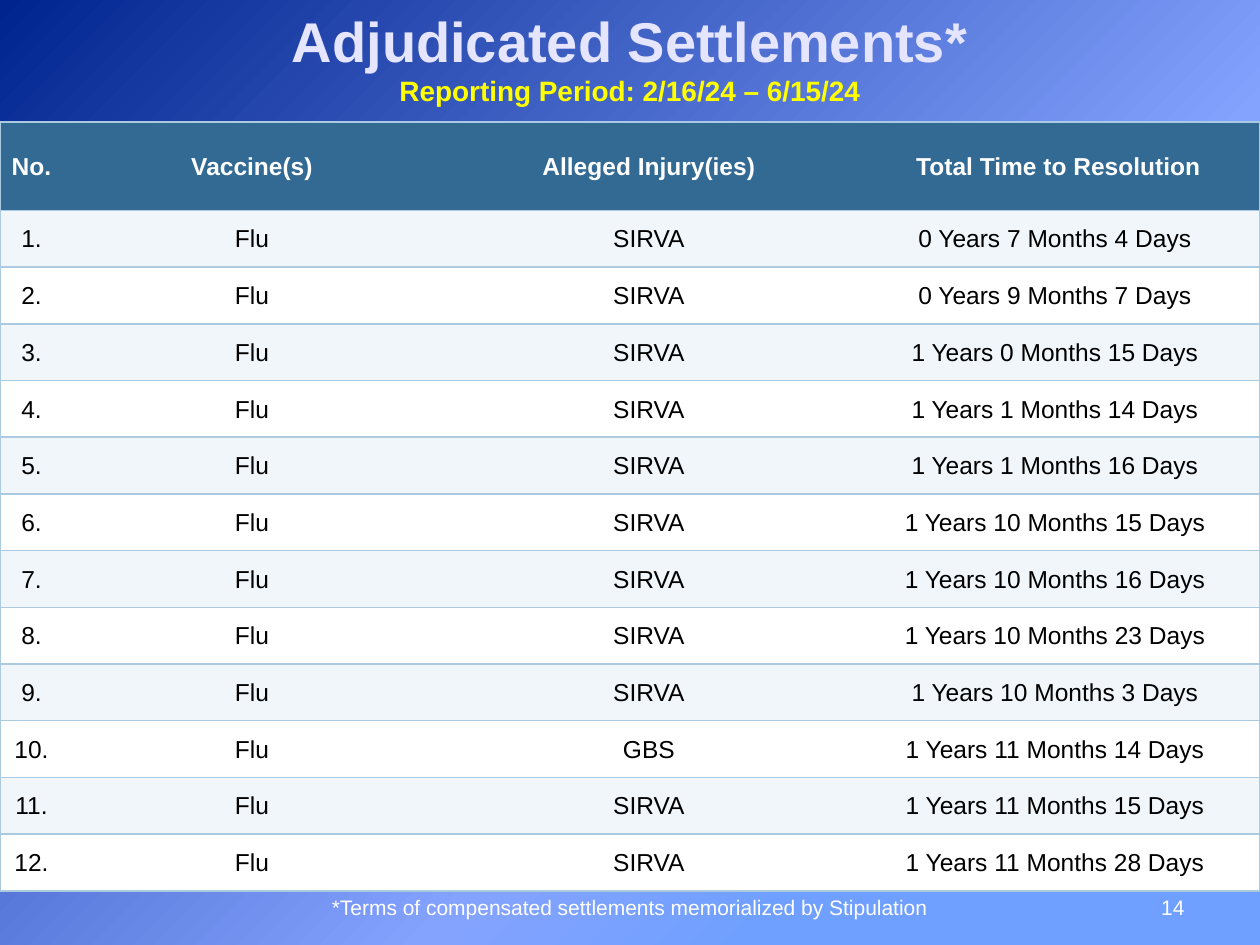
from dataclasses import dataclass

from pptx import Presentation
from pptx.dml.color import RGBColor
from pptx.enum.text import MSO_ANCHOR, PP_ALIGN
from pptx.oxml import parse_xml
from pptx.oxml.ns import nsdecls, qn
from pptx.util import Pt

EMU_PER_PX = 9144
BLANK_LAYOUT = 6
CENTER, RIGHT = PP_ALIGN.CENTER, PP_ALIGN.RIGHT
MIDDLE, BOTTOM = MSO_ANCHOR.MIDDLE, MSO_ANCHOR.BOTTOM
PLAIN_TABLE = "{2D5ABB26-0587-4C30-8999-92F81FD0307C}"


@dataclass(frozen=True)
class Theme:
    font: str = "Arial"
    title: str = "E5E5FF"
    period: str = "FFFF00"
    light: str = "FFFFFF"
    dark: str = "000000"
    header: str = "326A94"
    bands: tuple = ("F1F6FA", "FFFFFF")
    rule: str = "AACAE2"
    gradient: tuple = ((0, "00248E"), (62, "84A3FF"), (77, "70A0FF"))
    title_size: int = 32
    period_size: int = 16
    table_size: int = 14
    footer_size: int = 12


def px(length):
    return length * EMU_PER_PX


class SlideBuilder:
    def __init__(self, page, theme):
        self.page = page
        self.theme = theme

    def background(self):
        stops = "".join(
            f'<a:gs pos="{share * 1000}"><a:srgbClr val="{color}"/></a:gs>'
            for share, color in self.theme.gradient
        )
        self.page.element.cSld.insert(0, parse_xml(
            f'<p:bg {nsdecls("p", "a")}><p:bgPr><a:gradFill rotWithShape="0">'
            f'<a:gsLst>{stops}</a:gsLst><a:path path="circle">'
            '<a:fillToRect r="100000" b="100000"/></a:path></a:gradFill>'
            '<a:effectLst/></p:bgPr></p:bg>'
        ))

    def span(self, para, text, size, color, bold=False):
        span = para.add_run()
        span.text = text
        span.font.name = self.theme.font
        span.font.size = Pt(size)
        span.font.bold = bold
        span.font.color.rgb = RGBColor.from_string(color)

    def text(self, bounds, lines, align, anchor):
        box = self.page.shapes.add_textbox(*map(px, bounds))
        frame = box.text_frame
        frame.word_wrap = True
        frame.vertical_anchor = anchor
        para = frame.paragraphs[0]
        para.alignment = align
        for index, line in enumerate(lines):
            if index:
                para.add_line_break()
            self.span(para, *line)

    def borders(self, cell, sides):
        properties = cell._tc.get_or_add_tcPr()
        for side in sides:
            properties.append(parse_xml(
                f'<a:ln{side} {nsdecls("a")} w="12700"><a:solidFill>'
                f'<a:srgbClr val="{self.theme.rule}"/></a:solidFill></a:ln{side}>'
            ))

    def cell(self, cell, text, fill, color, bold, sides):
        cell.margin_left = cell.margin_right = cell.margin_top = px(1)
        cell.margin_bottom = 0
        cell.vertical_anchor = MIDDLE
        self.borders(cell, sides)
        cell.fill.solid()
        cell.fill.fore_color.rgb = RGBColor.from_string(fill)
        para = cell.text_frame.paragraphs[0]
        para.alignment = CENTER
        self.span(para, text, self.theme.table_size, color, bold)

    def table(self, left, top, widths, heights, rows):
        frame = self.page.shapes.add_table(
            len(rows), len(widths),
            px(left), px(top), px(sum(widths)), px(sum(heights)),
        )
        table = frame.table
        table.horz_banding = False
        table._tbl.tblPr.find(qn("a:tableStyleId")).text = PLAIN_TABLE
        for column, width in zip(table.columns, widths):
            column.width = px(width)
        last = len(widths) - 1
        for number, (height, values) in enumerate(zip(heights, rows)):
            table.rows[number].height = px(height)
            heading = number == 0
            fill = self.theme.header if heading else self.theme.bands[(number - 1) % 2]
            color = self.theme.light if heading else self.theme.dark
            for index, value in enumerate(values):
                sides = "L" * (index == 0) + "R" * (index == last) + "TB"
                self.cell(table.cell(number, index), value, fill, color, heading, sides)


HEADINGS = ("No.", "Vaccine(s)", "Alleged Injury(ies)", "Total Time to Resolution")
SETTLEMENTS = (
    ("SIRVA", 0, 7, 4),
    ("SIRVA", 0, 9, 7),
    ("SIRVA", 1, 0, 15),
    ("SIRVA", 1, 1, 14),
    ("SIRVA", 1, 1, 16),
    ("SIRVA", 1, 10, 15),
    ("SIRVA", 1, 10, 16),
    ("SIRVA", 1, 10, 23),
    ("SIRVA", 1, 10, 3),
    ("GBS", 1, 11, 14),
    ("SIRVA", 1, 11, 15),
    ("SIRVA", 1, 11, 28),
)


def main():
    deck = Presentation()
    deck.slide_width, deck.slide_height = px(1000), px(750)
    theme = Theme()
    page = deck.slides.add_slide(deck.slide_layouts[BLANK_LAYOUT])
    builder = SlideBuilder(page, theme)
    builder.background()
    builder.text((0, 0, 1000, 90), [
        ("Adjudicated Settlements*", theme.title_size, theme.title, True),
        ("Reporting Period: 2/16/24 – 6/15/24", theme.period_size, theme.period, True),
    ], CENTER, MIDDLE)
    builder.text((717, 683, 233, 52),
                 [("14", theme.footer_size, theme.light)], RIGHT, BOTTOM)
    builder.text((250, 700, 500, 35), [
        ("*Terms of compensated settlements memorialized by Stipulation",
         theme.footer_size, theme.light),
    ], CENTER, BOTTOM)
    rows = [HEADINGS] + [
        (f"{number}.", "Flu", injury, f"{years} Years {months} Months {days} Days ")
        for number, (injury, years, months, days) in enumerate(SETTLEMENTS, 1)
    ]
    heights = [70] + [45] * len(SETTLEMENTS)
    builder.table(0, 97, (50, 300, 330, 320), heights, rows)
    deck.save("out.pptx")


if __name__ == "__main__":
    main()
